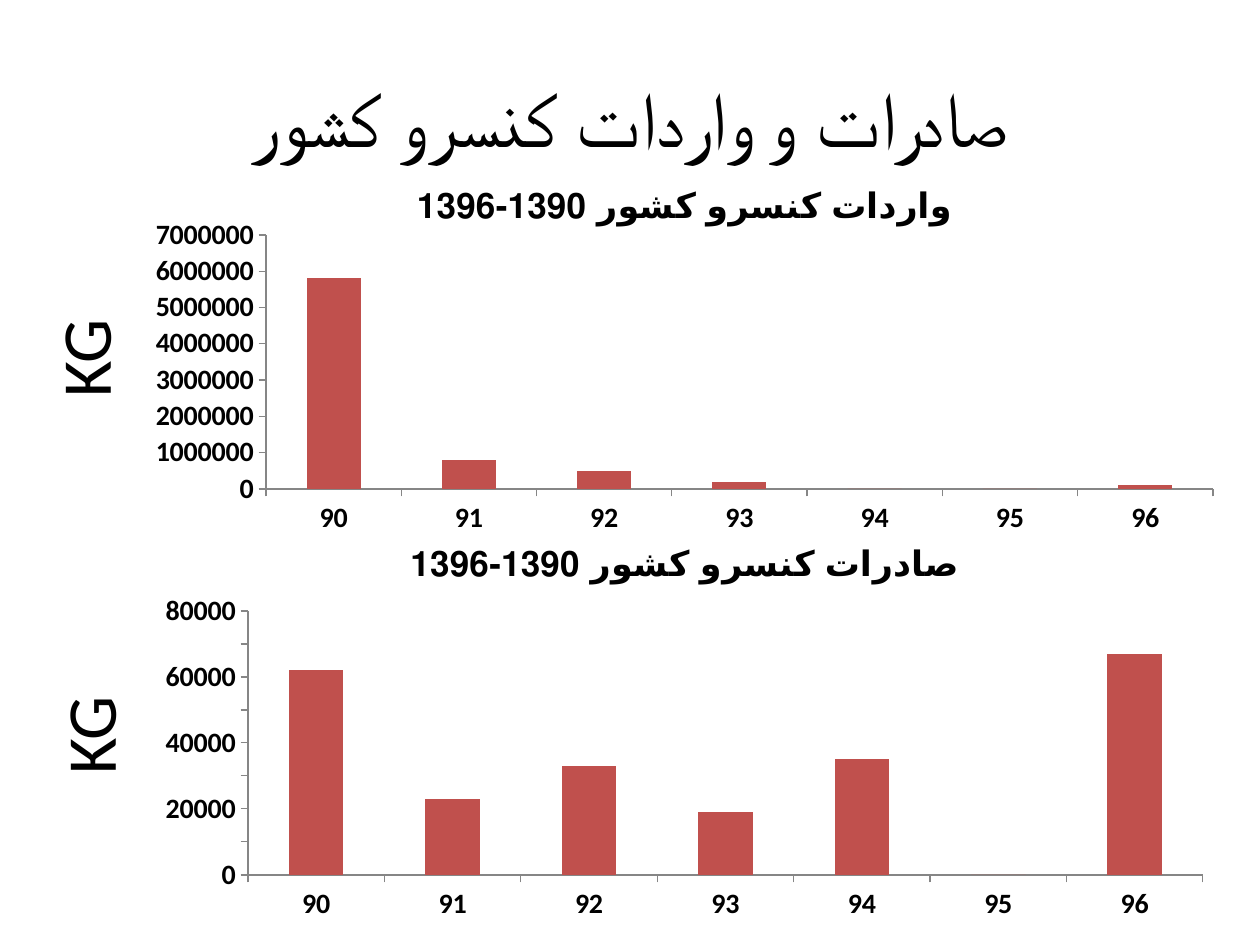
import pptx
import pptx.chart.data
import pptx.dml.color
import pptx.enum.chart
import pptx.enum.text
import pptx.oxml
import pptx.oxml.ns
import pptx.util

EMU_PER_PX = 914400 / 126
FONT = "Calibri"
COLORS = {"text": "000000", "bar": "C0504D", "axis": "868686"}
YEARS = ["90", "91", "92", "93", "94", "95", "96"]
IMPORTS = [5800000, 800000, 500000, 200000, 0, 0, 100000]
EXPORTS = [62000, 23000, 33000, 19000, 35000, 0, 67000]


def px(length):
    return pptx.util.Emu(round(length * EMU_PER_PX))


def color(name):
    return pptx.dml.color.RGBColor.from_string(COLORS[name])


def format_font(font, size, bold=False):
    font.name = FONT
    font.size = pptx.util.Pt(size)
    font.bold = bold
    font.color.rgb = color("text")


def fill_text(shape, text, size):
    text_frame = shape.text_frame
    text_frame.text = text
    text_frame.word_wrap = True
    text_frame.vertical_anchor = pptx.enum.text.MSO_ANCHOR.MIDDLE
    paragraph = text_frame.paragraphs[0]
    paragraph.alignment = pptx.enum.text.PP_ALIGN.CENTER
    format_font(paragraph.runs[0].font, size)


def add_title(slide, text):
    title = slide.shapes.title
    title.left, title.top, title.width, title.height = map(px, (63, 38, 1134, 157))
    fill_text(title, text, 44)


def add_unit_label(slide, left, top):
    label = slide.shapes.add_textbox(px(left), px(top), px(128), px(59))
    label.rotation = 270
    fill_text(label, "KG", 40)


def place_plot(chart, box, plot_box):
    left, top, width, height = box
    plot_left, plot_top, plot_width, plot_height = plot_box
    fractions = {
        "x": (plot_left - left) / width,
        "y": (plot_top - top) / height,
        "w": plot_width / width,
        "h": plot_height / height,
    }
    modes = '<c:layoutTarget val="inner"/><c:xMode val="edge"/><c:yMode val="edge"/>'
    values = "".join(f'<c:{key} val="{value:.4f}"/>' for key, value in fractions.items())
    layout = pptx.oxml.parse_xml(
        f'<c:layout {pptx.oxml.ns.nsdecls("c")}>'
        f"<c:manualLayout>{modes}{values}</c:manualLayout></c:layout>"
    )
    plot_area = chart._chartSpace.chart.plotArea
    for old_layout in plot_area.findall(pptx.oxml.ns.qn("c:layout")):
        plot_area.remove(old_layout)
    plot_area.insert(0, layout)


def format_axis(axis):
    axis.has_major_gridlines = False
    axis.major_tick_mark = pptx.enum.chart.XL_TICK_MARK.OUTSIDE
    axis.minor_tick_mark = pptx.enum.chart.XL_TICK_MARK.NONE
    axis.format.line.color.rgb = color("axis")
    format_font(axis.tick_labels.font, 16, True)


def add_column_chart(slide, title, values, box, plot_box, maximum, step):
    data = pptx.chart.data.CategoryChartData(number_format="General")
    data.categories = YEARS
    data.add_series("Series 1", values)
    chart = slide.shapes.add_chart(
        pptx.enum.chart.XL_CHART_TYPE.COLUMN_STACKED, *map(px, box), data
    ).chart
    chart.has_legend = False
    format_font(chart.font, 16, True)
    chart.has_title = True
    chart.chart_title.include_in_layout = False
    chart.chart_title.text_frame.text = title
    format_font(chart.chart_title.text_frame.paragraphs[0].runs[0].font, 20, True)
    format_axis(chart.category_axis)
    format_axis(chart.value_axis)
    chart.value_axis.minimum_scale = 0
    chart.value_axis.maximum_scale = maximum
    chart.value_axis.major_unit = step
    plot = chart.plots[0]
    plot.gap_width = 150
    plot.overlap = 100
    plot.vary_by_categories = False
    fill = plot.series[0].format.fill
    fill.solid()
    fill.fore_color.rgb = color("bar")
    place_plot(chart, box, plot_box)


def main():
    presentation = pptx.Presentation()
    presentation.slide_width = px(1260)
    presentation.slide_height = px(945)
    slide = presentation.slides.add_slide(presentation.slide_layouts[5])
    add_title(slide, "صادرات و واردات کنسرو کشور")
    add_column_chart(
        slide, "صادرات کنسرو کشور 1390-1396", EXPORTS,
        (144, 522, 1081, 407), (248, 611, 955, 264), 80000, 10000,
    )
    add_column_chart(
        slide, "واردات کنسرو کشور 1390-1396", IMPORTS,
        (134, 165, 1101, 378), (266, 235, 947, 254), 7000000, 1000000,
    )
    add_unit_label(slide, 19, 329)
    add_unit_label(slide, 24, 706)
    presentation.save("out.pptx")


if __name__ == "__main__":
    main()
